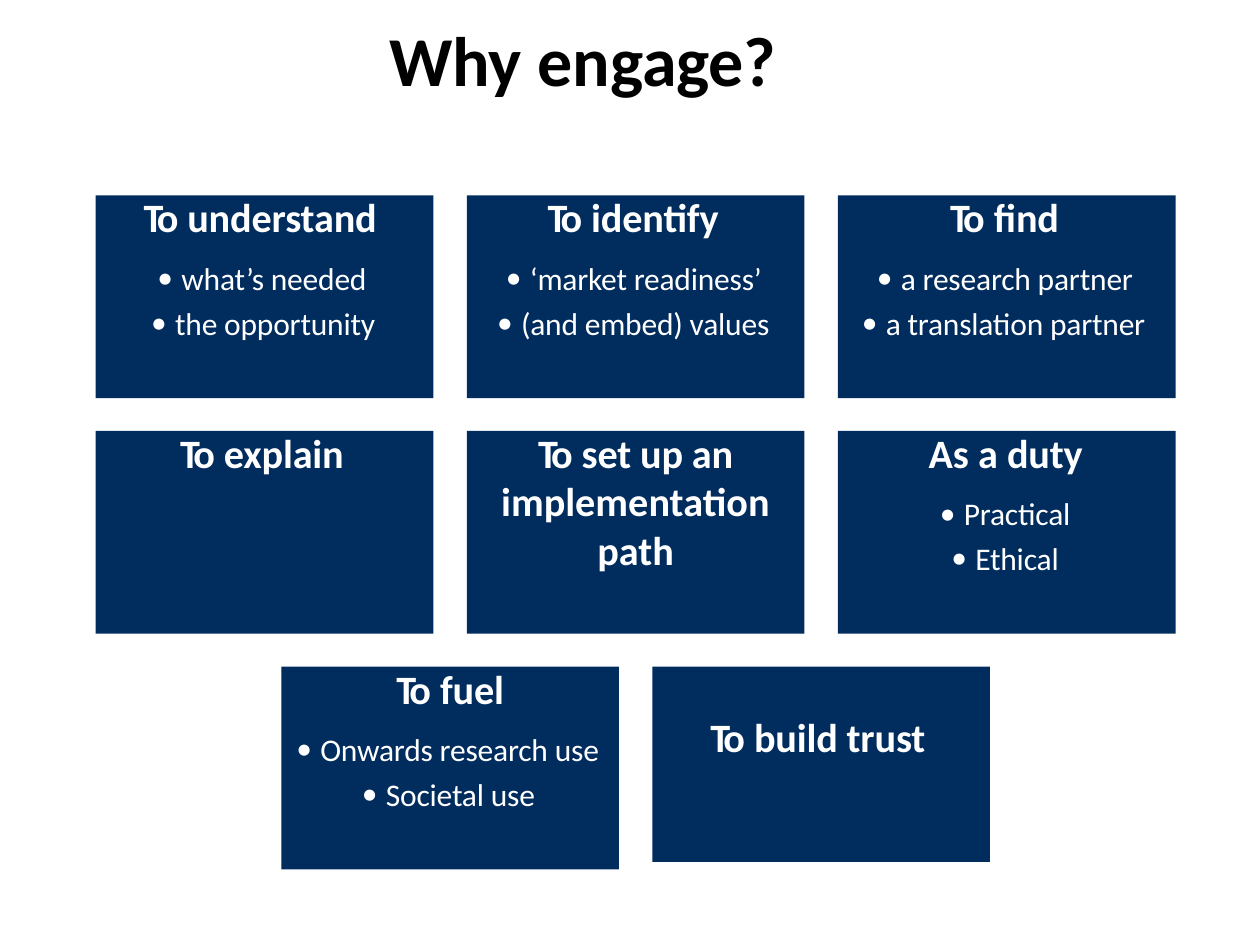
from dataclasses import dataclass

from pptx import Presentation
from pptx.dml.color import RGBColor
from pptx.enum.shapes import MSO_SHAPE as Preset
from pptx.enum.text import MSO_ANCHOR as Anchor, MSO_AUTO_SIZE as AutoSize, PP_ALIGN as Align
from pptx.oxml.ns import qn
from pptx.util import Inches, Pt
from lxml.etree import SubElement


@dataclass(frozen=True)
class Theme:
    """Colours, font and type sizes of the slide."""
    navy: RGBColor = RGBColor(0x00, 0x2C, 0x5E)
    white: RGBColor = RGBColor(0xFF, 0xFF, 0xFF)
    black: RGBColor = RGBColor(0x00, 0x00, 0x00)
    font: str = "Calibri"
    title: float = 40
    heading: float = 23
    item: float = 18


@dataclass(frozen=True)
class Grid:
    """Card grid in inches."""
    left: float = 0.76
    right: float = 9.33
    top: float = 1.55
    width: float = 2.68
    height: float = 1.61
    row_pitch: float = 1.87

    @property
    def column_pitch(self) -> float:
        """Return the distance between the left edges of neighbouring cards."""
        return (self.right - self.left - self.width) / 2


@dataclass(frozen=True)
class Item:
    """A bulleted line and its indent in inches."""
    text: str
    indent: float
    level: int = 0


@dataclass(frozen=True)
class Card:
    """A box with a heading; a heading without an indent is centred."""
    column: float
    row: int
    lead: str
    heading: str
    indent: float | None = None
    items: tuple[Item, ...] = ()
    second_line: str = ""
    height: float = Grid.height
    inset: float = 0


THEME = Theme()
GRID = Grid()
CARDS = (
    Card(0, 0, "To", " understand", 0.38,
         (Item("what’s needed", 0.68), Item("the opportunity", 0.63))),
    Card(1, 0, "To", " identify", 0.64,
         (Item("‘market readiness’", 0.5), Item("(and embed) values", 0.43))),
    Card(2, 0, "To", " find", 0.89,
         (Item("a research partner", 0.5), Item("a translation partner", 0.38))),
    Card(0, 1, "To", " explain", 0.67),
    Card(1, 1, "To", " set up an", second_line="implementation path"),
    Card(2, 1, "As a", " duty", 0.72,
         (Item("Practical", 1), Item("Ethical", 1.09, 1))),
    Card(0.5, 2, "To", " fuel", None,
         (Item("Onwards research use", 0.31), Item("Societal use", 0.83, 1))),
    Card(1.5, 2, "To", " build trust", 0.46, height=1.55, inset=0.38),
)


def add_run(paragraph, text: str, size: float, color: RGBColor,
            bold: bool = True, tracking: float = 0) -> None:
    """Add one formatted run, with tracking in points."""
    run = paragraph.add_run()
    run.text = text
    font = run.font
    font.name, font.size, font.bold = THEME.font, Pt(size), bold
    font.color.rgb = color
    if tracking:
        run._r.get_or_add_rPr().set("spc", str(round(tracking * 100)))


def prepare_frame(frame, top_inset: float) -> None:
    """Set the insets, wrapping and anchor of a text frame."""
    frame.margin_left = frame.margin_right = frame.margin_bottom = 0
    frame.margin_top = Inches(top_inset)
    frame.word_wrap = True
    frame.auto_size = AutoSize.NONE
    frame.vertical_anchor = Anchor.TOP


def set_indent(paragraph, left: float, hanging: float = 0) -> None:
    """Set the left margin and hanging indent in inches."""
    properties = paragraph._p.get_or_add_pPr()
    properties.set("marL", str(Inches(left)))
    properties.set("indent", str(Inches(-hanging)))


def add_item(frame, item: Item, space_before: float) -> None:
    """Add a bulleted line to a card."""
    paragraph = frame.add_paragraph()
    paragraph.alignment = Align.LEFT
    paragraph.level = item.level
    paragraph.space_before = Pt(space_before)
    set_indent(paragraph, item.indent, 0.19)
    properties = paragraph._p.get_or_add_pPr()
    SubElement(properties, qn("a:buFont")).set("typeface", THEME.font)
    SubElement(properties, qn("a:buChar")).set("char", "•")
    add_run(paragraph, item.text, THEME.item, THEME.white, False, -0.1)


def add_card(slide, card: Card) -> None:
    """Draw a card with its heading and items."""
    shape = slide.shapes.add_shape(
        Preset.RECTANGLE,
        Inches(GRID.left + card.column * GRID.column_pitch),
        Inches(GRID.top + card.row * GRID.row_pitch),
        Inches(GRID.width), Inches(card.height))
    shape.shadow.inherit = False
    shape.fill.solid()
    shape.fill.fore_color.rgb = THEME.navy
    shape.line.fill.background()
    frame = shape.text_frame
    prepare_frame(frame, card.inset)
    heading = frame.paragraphs[0]
    heading.alignment = Align.CENTER if card.indent is None else Align.LEFT
    heading.line_spacing = Pt(26.1)
    set_indent(heading, card.indent or 0)
    tracking = -1.9 if card.lead == "To" else 0
    add_run(heading, card.lead, THEME.heading, THEME.white, tracking=tracking)
    add_run(heading, card.heading, THEME.heading, THEME.white, tracking=-0.1)
    if card.second_line:
        paragraph = frame.add_paragraph()
        paragraph.alignment = Align.CENTER
        set_indent(paragraph, 0.15)
        paragraph._p.get_or_add_pPr().set("marR", str(Inches(0.15)))
        add_run(paragraph, card.second_line, THEME.heading, THEME.white)
    for index, item in enumerate(card.items):
        add_item(frame, item, 4.1 if index else 10.2)


def add_title(slide) -> None:
    """Place and fill the title placeholder."""
    title = slide.shapes.title
    title.left, title.top = Inches(3.08), Inches(0.12)
    title.width, title.height = Inches(3.11), Inches(0.7)
    prepare_frame(title.text_frame, 0.01)
    paragraph = title.text_frame.paragraphs[0]
    paragraph.alignment = Align.LEFT
    set_indent(paragraph, 0.01)
    add_run(paragraph, "Why ", THEME.title, THEME.black)
    add_run(paragraph, "engage?", THEME.title, THEME.black, tracking=-0.1)


def main() -> None:
    """Build and save the slide."""
    presentation = Presentation()
    presentation.slide_width, presentation.slide_height = Inches(10), Inches(7.5)
    slide = presentation.slides.add_slide(presentation.slide_layouts[5])
    add_title(slide)
    for card in CARDS:
        add_card(slide, card)
    presentation.save("out.pptx")


if __name__ == "__main__":
    main()
